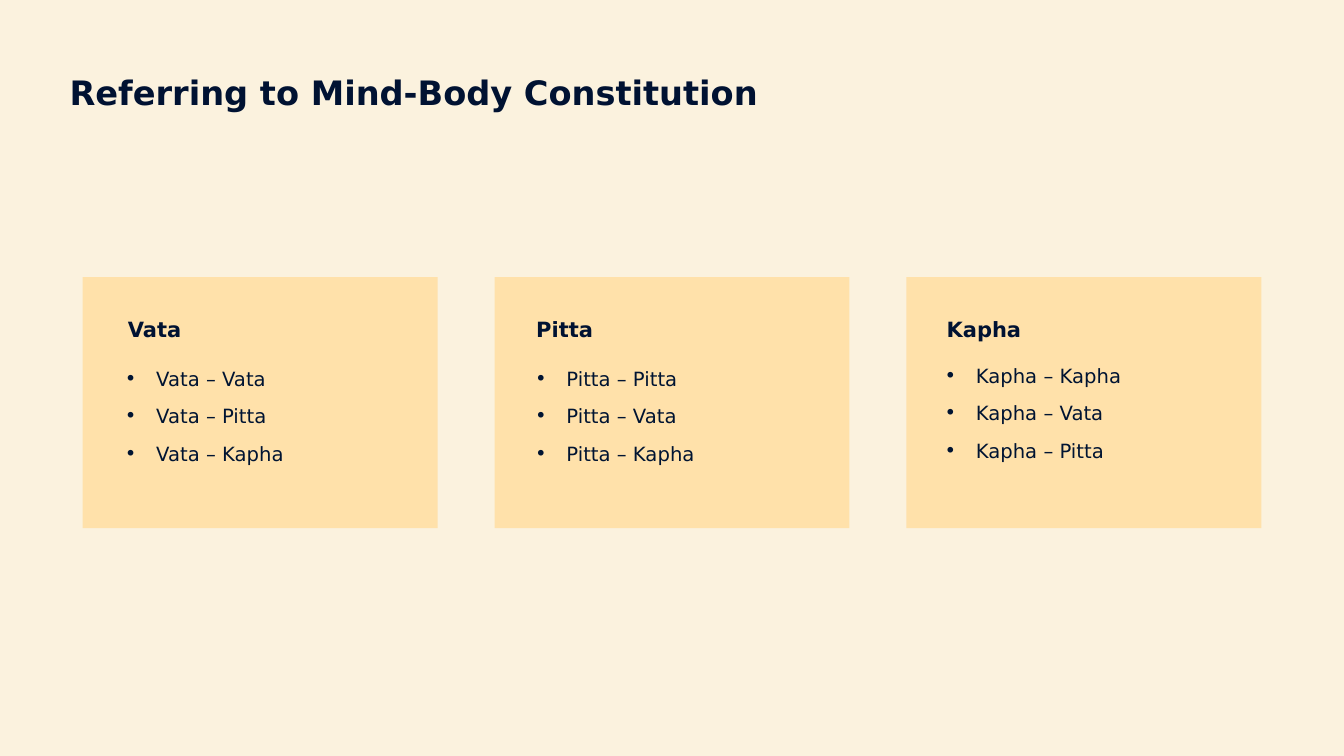
import pptx
import pptx.dml.color
import pptx.enum.shapes
import pptx.enum.text
import pptx.oxml.ns
import pptx.util
from lxml import etree
from pptx.util import Inches

FONT = "DejaVu Sans"
BACKGROUND = "FBF2DE"
CARD_FILL = "FFE1AA"
HEADING_COLOR = "001232"
BODY_COLOR = "001432"
CARD_LEFT = 0.82
CARD_STEP = 4.085

CONSTITUTIONS = [
    ("Vata", 1.17, 1.92, ["Vata – Vata", "Vata – Pitta", "Vata – Kapha"], 1.14, 3.59, 2.22),
    ("Pitta", 5.22, 2.11, ["Pitta – Pitta", "Pitta – Vata", "Pitta – Kapha"], 5.21, 3.59, 2.44),
    ("Kapha", 9.29, 2.11, ["Kapha – Kapha", "Kapha – Vata", "Kapha – Pitta"], 9.27, 3.56, 2.44),
]


def set_fill(fill, color):
    fill.solid()
    fill.fore_color.rgb = pptx.dml.color.RGBColor.from_string(color)


def set_font(paragraph, size, color, bold=False):
    font = paragraph.font
    font.name = FONT
    font.size = pptx.util.Pt(size)
    font.bold = bold
    set_fill(font.fill, color)


def add_bullet(paragraph, color):
    properties = paragraph._p.get_or_add_pPr()
    properties.set("marL", str(Inches(0.31)))
    properties.set("indent", str(-Inches(0.31)))
    bullet_color = etree.SubElement(properties, pptx.oxml.ns.qn("a:buClr"))
    etree.SubElement(bullet_color, pptx.oxml.ns.qn("a:srgbClr"), val=color)
    etree.SubElement(properties, pptx.oxml.ns.qn("a:buFont"), typeface=FONT)
    etree.SubElement(properties, pptx.oxml.ns.qn("a:buChar"), char="•")


def set_title(slide, text):
    title = slide.shapes.title
    title.left, title.top = Inches(0.69), Inches(0.63)
    title.width, title.height = Inches(11), Inches(0.62)
    frame = title.text_frame
    frame.text = text
    frame.word_wrap = True
    frame.auto_size = pptx.enum.text.MSO_AUTO_SIZE.NONE
    frame.vertical_anchor = pptx.enum.text.MSO_ANCHOR.TOP
    frame.margin_left = frame.margin_right = frame.margin_top = frame.margin_bottom = 0
    paragraph = frame.paragraphs[0]
    paragraph.alignment = pptx.enum.text.PP_ALIGN.LEFT
    paragraph.line_spacing = 1.2
    set_font(paragraph, 24, HEADING_COLOR, bold=True)


def add_card(slide, left):
    card = slide.shapes.add_shape(
        pptx.enum.shapes.MSO_SHAPE.RECTANGLE,
        Inches(left), Inches(2.75), Inches(3.52), Inches(2.49))
    card.shadow.inherit = False
    set_fill(card.fill, CARD_FILL)
    card.line.fill.background()


def add_text_frame(slide, left, top, width, height):
    box = slide.shapes.add_textbox(Inches(left), Inches(top), Inches(width), Inches(height))
    box.text_frame.word_wrap = True
    return box.text_frame


def add_heading(slide, text, left, width):
    frame = add_text_frame(slide, left, 3.09, width, 0.36)
    frame.text = text
    set_font(frame.paragraphs[0], 15, HEADING_COLOR, bold=True)


def add_bullet_list(slide, items, left, top, width):
    frame = add_text_frame(slide, left, top, width, 1.18)
    frame.text = "\n".join(items)
    for index, paragraph in enumerate(frame.paragraphs):
        add_bullet(paragraph, BODY_COLOR)
        if index:
            paragraph.space_before = pptx.util.Pt(10)
        set_font(paragraph, 14, BODY_COLOR)


def main():
    presentation = pptx.Presentation()
    presentation.slide_width = Inches(13.33)
    presentation.slide_height = Inches(7.5)
    slide = presentation.slides.add_slide(presentation.slide_layouts.get_by_name("Title Only"))
    set_fill(slide.background.fill, BACKGROUND)
    set_title(slide, "Referring to Mind-Body Constitution")
    for index, constitution in enumerate(CONSTITUTIONS):
        name, heading_left, heading_width, items, list_left, list_top, list_width = constitution
        add_card(slide, CARD_LEFT + index * CARD_STEP)
        add_heading(slide, name, heading_left, heading_width)
        add_bullet_list(slide, items, list_left, list_top, list_width)
    presentation.save("out.pptx")


if __name__ == "__main__":
    main()
